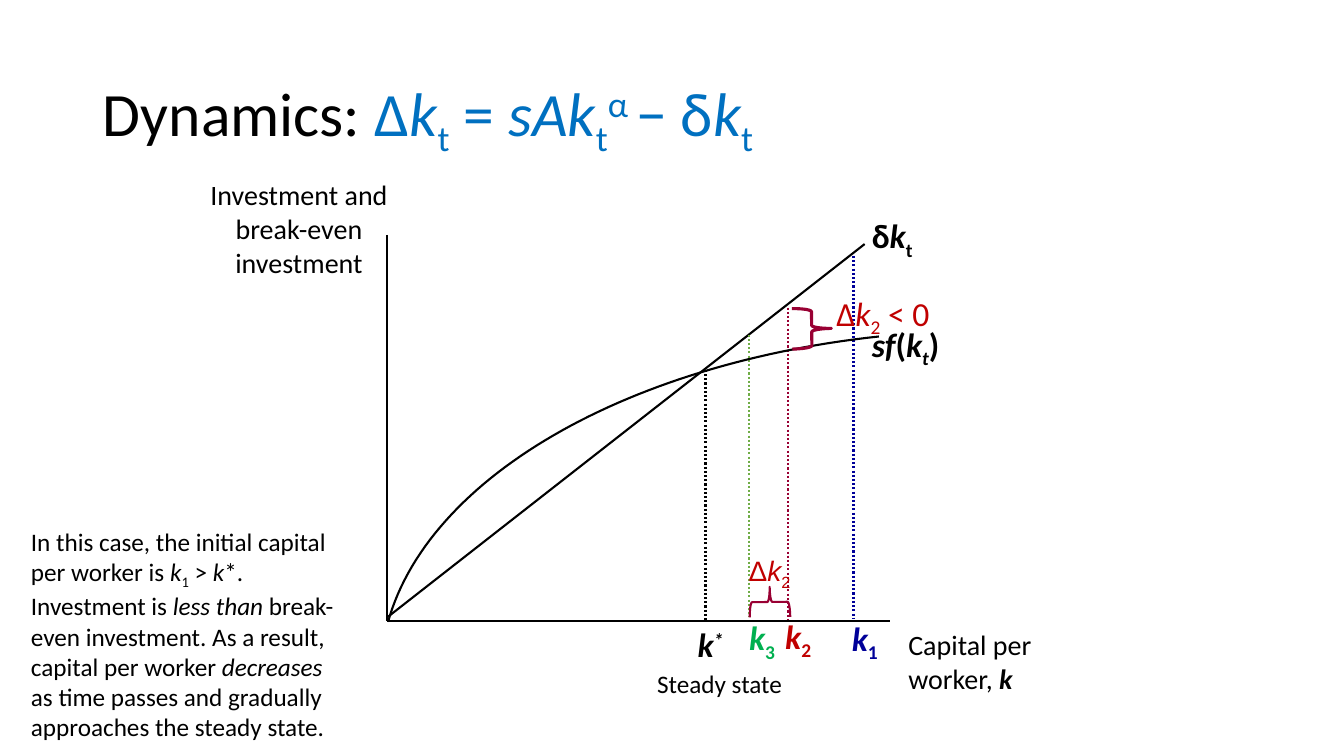
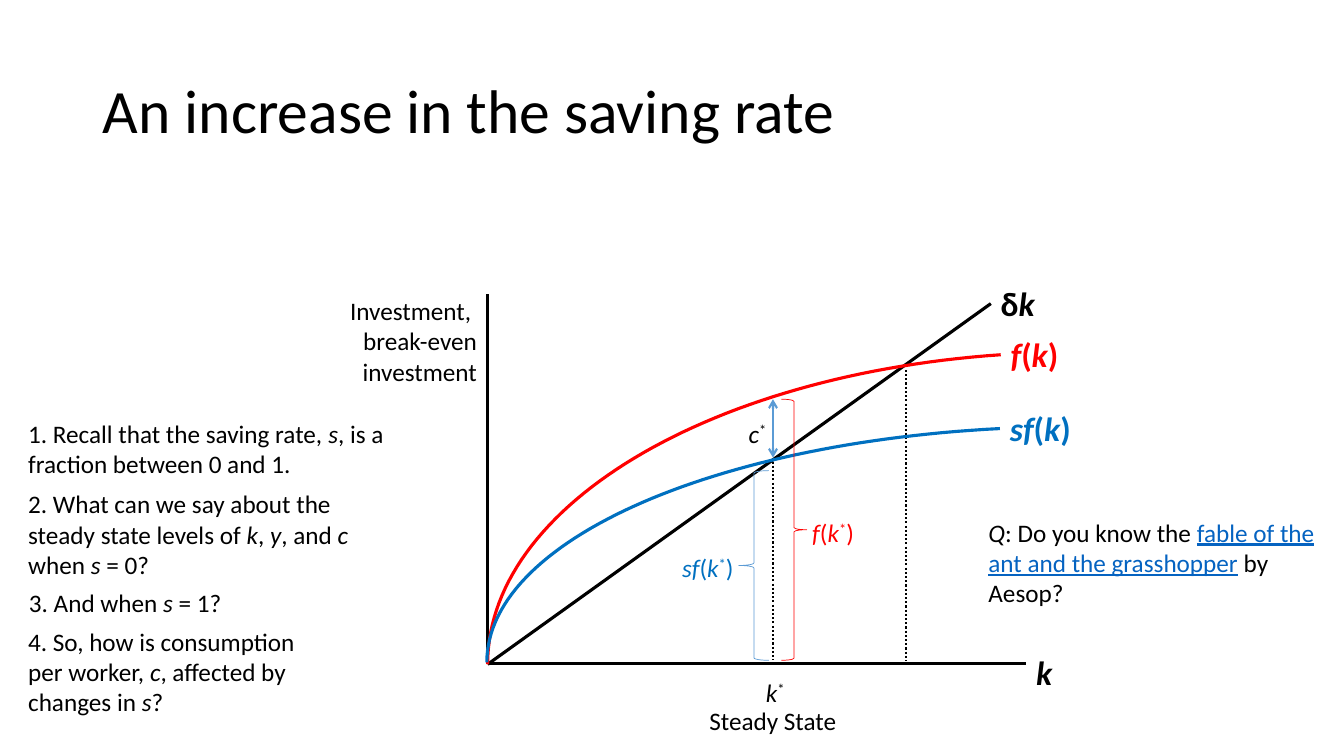
"""Build two slides on the steady state of capital per worker."""
from dataclasses import dataclass

from lxml.etree import SubElement
from pptx import Presentation
from pptx.dml.color import RGBColor
from pptx.enum.dml import MSO_LINE_DASH_STYLE as Dash
from pptx.enum.shapes import MSO_CONNECTOR as Connector, MSO_SHAPE as Shape
from pptx.enum.text import MSO_ANCHOR as Anchor, MSO_AUTO_SIZE as AutoSize, PP_ALIGN as Align
from pptx.oxml.ns import qn
from pptx.util import Cm, Pt


@dataclass(frozen=True)
class Theme:
    font: str = "Calibri"
    symbol_font: str = "Arial"
    title: int = 44
    symbol: int = 24
    axis: int = 20
    body: int = 18
    black: str = "000000"
    blue: str = "0070C0"
    sky: str = "5B9BD5"
    navy: str = "000099"
    red: str = "FF0000"
    crimson: str = "C00000"
    maroon: str = "990033"
    green: str = "00B050"
    leaf: str = "70AD47"
    link: str = "0563C1"


THEME = Theme()
BASELINES = {"_": "-25000", "^": "30000"}


def write_runs(text_frame, runs, size, color, align=Align.LEFT):
    """Write (text, marks) runs: b bold, i italic, u link, f formula, a symbol font, _ and ^ shifts."""
    paragraph = text_frame.paragraphs[0]
    paragraph.alignment = align
    for text, marks in runs:
        if text == "\n":
            paragraph.add_line_break()
            continue
        run = paragraph.add_run()
        run.text = text
        font = run.font
        font.name = THEME.symbol_font if "a" in marks else THEME.font
        font.size = Pt(size)
        font.bold = "b" in marks
        font.italic = "i" in marks
        font.underline = "u" in marks
        run_color = THEME.link if "u" in marks else THEME.blue if "f" in marks else color
        font.color.rgb = RGBColor.from_string(run_color)
        for mark, baseline in BASELINES.items():
            if mark in marks:
                run._r.get_or_add_rPr().set("baseline", baseline)


def style_line(line, color, width):
    """Set the colour and width of a line."""
    line.color.rgb = RGBColor.from_string(color)
    line.width = Pt(width)


dynamics = {
    "title": [
        ("Dynamics: ", ""), ("Δ", "f"), ("k", "fi"), ("t", "f_"), (" = ", "f"), ("sAk", "fi"),
        ("t", "f_"), ("α ", "f^"), ("− δ", "f"), ("k", "fi"), ("t", "f_"),
    ],
    "lines": [
        (9.75, 5.92, 9.75, 15.65, THEME.black, 1, ""),
        (9.75, 15.65, 22.43, 15.65, THEME.black, 1, ""),
        (9.78, 15.54, 21.79, 6.15, THEME.black, 1.5, ""),
        (17.78, 9.32, 17.78, 15.67, THEME.black, 1.5, "dotted"),
        (21.51, 6.45, 21.51, 15.6, THEME.navy, 1.5, "dotted"),
        (19.86, 7.75, 19.86, 15.62, THEME.maroon, 1.5, "dotted"),
        (18.87, 8.43, 18.87, 15.54, THEME.leaf, 1.5, "dotted"),
    ],
    "curves": [
        ([(22.15, 8.48), (15.75, 9.17), (10.8, 12.04), (9.78, 15.67)], THEME.black, 1.5),
    ],
    "braces": [
        (Shape.LEFT_BRACE, (19.96, 7.77, 0.99, 1.02), 179.3, THEME.maroon, 2.25),
        (Shape.LEFT_BRACE, (19.02, 14.66, 0.76, 1.02), 89.3, THEME.maroon, 1.5),
    ],
    "tight labels": [
        ((4.65, 4.47, 5.77, 2.57), Align.CENTER, THEME.axis, THEME.black,
         [("Investment and break-even investment", "")]),
        ((22.89, 15.82, 4.45, 1.7), Align.LEFT, THEME.axis, THEME.black,
         [("Capital per ", ""), ("\n", ""), ("worker, ", ""), ("k", "bi")]),
        ((21.97, 8.23, 2.46, 1.02), Align.LEFT, THEME.symbol, THEME.black,
         [("sf", "bi"), ("(", "b"), ("k", "bi"), ("t", "bi_"), (")", "b")]),
        ((21.97, 5.49, 3.81, 1.02), Align.LEFT, THEME.symbol, THEME.black,
         [("δ", "b"), ("k", "bi"), ("t", "b_")]),
        ((17.58, 15.72, 1.47, 1.02), Align.LEFT, THEME.symbol, THEME.black,
         [("k", "bi"), ("*", "bi^")]),
        ((21.06, 15.39, 1.47, 1.52), Align.CENTER, THEME.symbol, THEME.navy,
         [("k", "bi"), ("1", "b_")]),
        ((19.38, 15.34, 1.47, 1.52), Align.CENTER, THEME.symbol, THEME.crimson,
         [("k", "bi"), ("2", "b_")]),
        ((18.47, 15.37, 1.47, 1.52), Align.CENTER, THEME.symbol, THEME.green,
         [("k", "bi"), ("3", "b_")]),
        ((21.08, 7.44, 3.12, 1.02), Align.LEFT, THEME.symbol, THEME.crimson,
         [("Δ", ""), ("k", "i"), ("2", "_"), (" < 0", "")]),
        ((18.87, 14, 1.35, 0.86), Align.LEFT, THEME.axis, THEME.crimson,
         [("Δ", "a"), ("k", "ai"), ("2", "a_")]),
    ],
    "labels": [
        ((16.31, 16.71, 4.01, 1.02), Align.LEFT, THEME.body, THEME.black, [("Steady state", "")]),
        ((0.53, 13.13, 8.53, 5.64), Align.LEFT, THEME.body, THEME.black,
         [("In this case, the initial capital per worker is ", ""), ("k", "i"), ("1", "_"),
          (" > ", ""), ("k", "i"), ("*. Investment is ", ""), ("less than ", "i"),
          ("break-even investment. As a result, capital per worker ", ""), ("decreases", "i"),
          (" as time passes and gradually approaches the steady state.", "")]),
    ],
}

saving = {
    "title": [("An increase in the saving rate", "")],
    "lines": [
        (12.29, 16.71, 25.86, 16.71, THEME.black, 2.25, ""),
        (12.29, 7.42, 12.29, 16.74, THEME.black, 2.25, ""),
        (12.29, 16.74, 24.97, 7.65, THEME.black, 2.25, ""),
        (22.83, 9.32, 22.83, 16.64, THEME.black, 1.5, "dotted"),
        (19.48, 11.63, 19.48, 16.64, THEME.black, 1.5, "dotted"),
        (19.48, 11.53, 19.48, 10.06, THEME.sky, 1.5, "arrow"),
    ],
    "curves": [
        ([(25.22, 8.94), (17.83, 9.45), (12.29, 12.78), (12.29, 16.74)], THEME.red, 2.25),
        ([(25.2, 10.8), (17.81, 11.18), (12.27, 13.69), (12.27, 16.69)], THEME.blue, 2.25),
    ],
    "braces": [
        (Shape.RIGHT_BRACE, (19.69, 10.06, 0.64, 6.58), 0, THEME.red, 0.5),
        (Shape.LEFT_BRACE, (18.62, 11.86, 0.76, 4.78), 0, THEME.sky, 0.5),
    ],
    "tight labels": [],
    "labels": [
        ((7.37, 7.32, 4.9, 2.57), Align.RIGHT, THEME.body, THEME.black,
         [("Investment, ", ""), ("\n", ""), ("break-even investment", "")]),
        ((25.86, 16.31, 1.27, 1.27), Align.LEFT, THEME.symbol, THEME.black, [("k", "bi")]),
        ((24.97, 7.01, 1.65, 1.27), Align.LEFT, THEME.symbol, THEME.black,
         [("δ", "b"), ("k", "bi")]),
        ((25.22, 8.28, 3.61, 1.27), Align.LEFT, THEME.symbol, THEME.red,
         [("f", "bi"), ("(", "b"), ("k", "bi"), (")", "b")]),
        ((25.2, 10.16, 2.34, 1.27), Align.LEFT, THEME.symbol, THEME.blue,
         [("sf", "bi"), ("(", "b"), ("k", "bi"), (")", "b")]),
        ((19.05, 16.94, 1.27, 1.02), Align.LEFT, THEME.body, THEME.black,
         [("k", "i"), ("*", "^")]),
        ((17.15, 17.65, 4.65, 1.02), Align.CENTER, THEME.body, THEME.black,
         [("Steady State", "")]),
        ((18.62, 10.41, 1.07, 1.02), Align.LEFT, THEME.body, THEME.black,
         [("c", "i"), ("*", "^")]),
        ((20.22, 12.9, 1.8, 1.02), Align.LEFT, THEME.body, THEME.red,
         [("f", "i"), ("(", ""), ("k", "i"), ("*", "^"), (")", "")]),
        ((16.94, 13.79, 2.01, 1.02), Align.LEFT, THEME.body, THEME.blue,
         [("sf", "i"), ("(", ""), ("k", "i"), ("*", "^"), (")", "")]),
        ((0.46, 10.41, 10.11, 1.8), Align.LEFT, THEME.body, THEME.black,
         [("1. Recall that the saving rate, ", ""), ("s", "i"),
          (", is a fraction between 0 and 1.", "")]),
        ((0.46, 12.19, 8.89, 2.57), Align.LEFT, THEME.body, THEME.black,
         [("2. What can we say about the steady state levels of ", ""), ("k", "i"), (", ", ""),
          ("y", "i"), (", and ", ""), ("c", "i"), (" when ", ""), ("s", "i"), (" = 0?", "")]),
        ((0.48, 14.68, 5.72, 1.02), Align.LEFT, THEME.body, THEME.black,
         [("3. And when ", ""), ("s", "i"), (" = 1?", "")]),
        ((0.46, 15.65, 7.42, 2.57), Align.LEFT, THEME.body, THEME.black,
         [("4. So, how is consumption per worker, ", ""), ("c", "i"),
          (", affected by changes in ", ""), ("s", "i"), ("?", "")]),
        ((24.66, 12.9, 8.84, 2.57), Align.LEFT, THEME.body, THEME.black,
         [("Q", "i"), (": Do you know the ", ""),
          ("fable of the ant and the grasshopper", "u"), (" by Aesop?", "")]),
    ],
}

presentation = Presentation()
presentation.slide_width = Cm(33.87)
presentation.slide_height = Cm(19.05)
layout = presentation.slide_layouts.get_by_name("Title Only")

for content in (dynamics, saving):
    slide = presentation.slides.add_slide(layout)
    shapes = slide.shapes

    title = shapes.title
    title.left, title.top, title.width, title.height = Cm(2.34), Cm(1.02), Cm(29.21), Cm(3.68)
    title.text_frame.vertical_anchor = Anchor.MIDDLE
    title.text_frame.auto_size = AutoSize.NONE
    title.text_frame.paragraphs[0].line_spacing = 0.9
    write_runs(title.text_frame, content["title"], THEME.title, THEME.black)

    for start_x, start_y, end_x, end_y, color, width, kind in content["lines"]:
        connector = shapes.add_connector(
            Connector.STRAIGHT, Cm(start_x), Cm(start_y), Cm(end_x), Cm(end_y))
        style_line(connector.line, color, width)
        if kind == "dotted":
            connector.line.dash_style = Dash.ROUND_DOT
        if kind == "arrow":
            for end in ("a:headEnd", "a:tailEnd"):
                SubElement(connector.line._get_or_add_ln(), qn(end), type="arrow")
        SubElement(connector._element.spPr, qn("a:effectLst"))

    for controls, color, width in content["curves"]:
        points = []
        for step in range(61):
            t = step / 60
            weights = ((1 - t) ** 3, 3 * t * (1 - t) ** 2, 3 * t ** 2 * (1 - t), t ** 3)
            points.append(tuple(
                Cm(sum(weight * value for weight, value in zip(weights, values)))
                for values in zip(*controls)))
        builder = shapes.build_freeform(*points[0])
        builder.add_line_segments(points[1:], close=False)
        curve = builder.convert_to_shape()
        curve.shadow.inherit = False
        curve.fill.background()
        style_line(curve.line, color, width)

    for preset, box, rotation, color, width in content["braces"]:
        brace = shapes.add_shape(preset, *map(Cm, box))
        brace.rotation = rotation
        brace.shadow.inherit = False
        brace.fill.background()
        style_line(brace.line, color, width)

    for group in ("tight labels", "labels"):
        for box, align, size, color, runs in content[group]:
            text_frame = shapes.add_textbox(*map(Cm, box)).text_frame
            text_frame.word_wrap = True
            if group == "tight labels":
                text_frame.vertical_anchor = Anchor.MIDDLE
                text_frame.margin_left = text_frame.margin_right = Cm(0)
                text_frame.margin_top = text_frame.margin_bottom = Cm(0)
            write_runs(text_frame, runs, size, color, align)

presentation.save("out.pptx")
